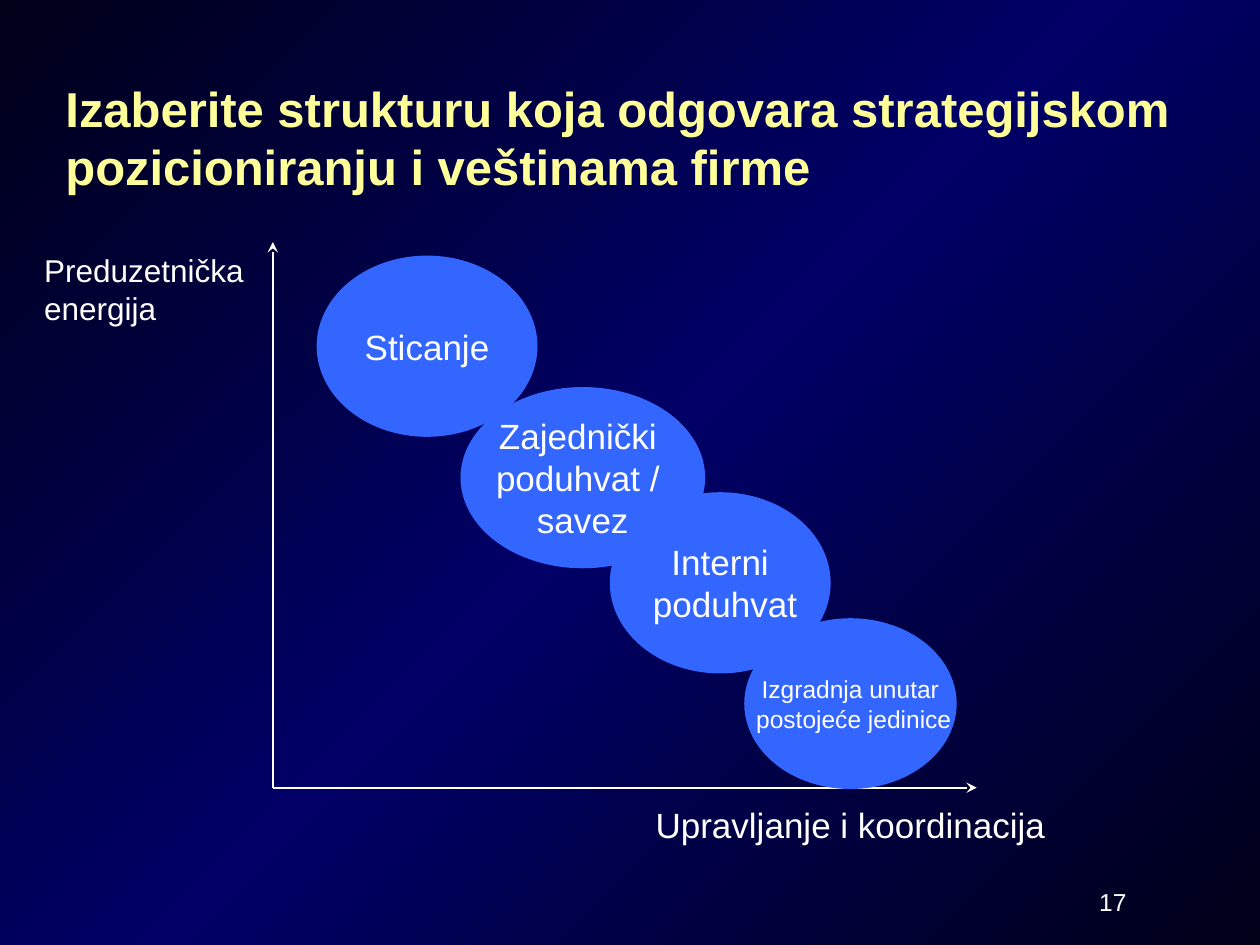
import copy

import pptx
import pptx.dml.color
import pptx.enum.shapes
import pptx.enum.text
import pptx.oxml
import pptx.oxml.ns
import pptx.util

Cm = pptx.util.Cm
Pt = pptx.util.Pt
ALIGN = pptx.enum.text.PP_ALIGN
ANCHOR = pptx.enum.text.MSO_ANCHOR


def color(value):
    return pptx.dml.color.RGBColor.from_string(value)


def add_xml(parent, tag, **attributes):
    element = pptx.oxml.parse_xml(f"<{tag} {pptx.oxml.ns.nsdecls('a')}/>")
    for name, value in attributes.items():
        element.set(name, value)
    parent.append(element)


class SlideBuilder:
    font = "Arial"
    text_color = "FFFFFF"
    title_color = "FFFF99"
    bubble_color = "3366FF"

    def __init__(self, slide):
        self.slide = slide

    def background(self, edge, middle):
        fill = self.slide.background.fill
        fill.gradient()
        fill.gradient_angle = 315
        first = next(self.slide.element.iter(pptx.oxml.ns.qn("a:gs")))
        first.addnext(copy.deepcopy(first))
        for stop, value, position in zip(
            fill.gradient_stops, (edge, middle, edge), (0, 0.5, 1)
        ):
            stop.color.rgb = color(value)
            stop.position = position

    def fill_text(self, shape, lines, size, align, anchor, wrap=False, bold=False, value=None):
        frame = shape.text_frame
        frame.text = "\n".join(lines)
        frame.word_wrap = wrap
        frame.vertical_anchor = anchor
        for paragraph in frame.paragraphs:
            paragraph.alignment = align
            for run in paragraph.runs:
                run.font.name = self.font
                run.font.size = Pt(size)
                run.font.bold = bold
                run.font.color.rgb = color(value or self.text_color)

    def text(self, box, lines, size, align=ALIGN.LEFT, anchor=ANCHOR.TOP, **style):
        shape = self.slide.shapes.add_textbox(*map(Cm, box))
        self.fill_text(shape, lines, size, align, anchor, **style)

    def bubble(self, box, lines, size):
        shape = self.slide.shapes.add_shape(
            pptx.enum.shapes.MSO_SHAPE.OVAL, *map(Cm, box)
        )
        shape.shadow.inherit = False
        shape.fill.solid()
        shape.fill.fore_color.rgb = color(self.bubble_color)
        shape.line.color.rgb = color(self.bubble_color)
        shape.line.width = Pt(1.5)
        self.fill_text(shape, lines, size, ALIGN.CENTER, ANCHOR.MIDDLE)

    def axes(self, origin, ends):
        group = self.slide.shapes.add_group_shape()
        for end in ends:
            axis = group.shapes.add_connector(
                pptx.enum.shapes.MSO_CONNECTOR.STRAIGHT, *map(Cm, origin + end)
            )
            axis.line.color.rgb = color(self.text_color)
            axis.line.width = Pt(1)
            properties = axis.element.spPr
            add_xml(properties.find(pptx.oxml.ns.qn("a:ln")), "a:tailEnd", type="stealth")
            add_xml(properties, "a:effectLst")


def main():
    presentation = pptx.Presentation()
    presentation.slide_width = Cm(25.4)
    presentation.slide_height = Cm(19.05)
    builder = SlideBuilder(presentation.slides.add_slide(presentation.slide_layouts[6]))

    builder.background("000018", "000066")
    builder.text((19.96, 17.48, 3, 1.4), ["17"], 14, ALIGN.RIGHT, ANCHOR.MIDDLE)
    builder.axes((5.5, 15.88), [(5.5, 4.88), (19.69, 15.88)])
    builder.text((12.93, 16.08, 8.43, 1.12), ["Upravljanje i koordinacija"], 20, ALIGN.CENTER)
    builder.text(
        (1.07, 1.45, 24.03, 2.16),
        ["Izaberite strukturu koja odgovara strategijskom pozicioniranju i veštinama firme"],
        28,
        wrap=True,
        bold=True,
        value=builder.title_color,
    )
    builder.text((0.64, 4.93, 4.57, 1.8), ["Preduzetnička", "energija"], 18)

    bubbles = [
        ((9.31, 7.83, 4.88, 3.6), ["Zajednički ", "poduhvat / ", "savez"], 20),
        ((12.32, 9.95, 4.4, 3.6), ["Interni", " poduhvat"], 20),
        ((15.03, 12.49, 4.23, 3.39), ["Izgradnja unutar", " postojeće jedinice"], 14),
        ((6.41, 5.18, 4.4, 3.6), ["Sticanje"], 20),
    ]
    for box, lines, size in bubbles:
        builder.bubble(box, lines, size)

    presentation.save("out.pptx")


if __name__ == "__main__":
    main()
